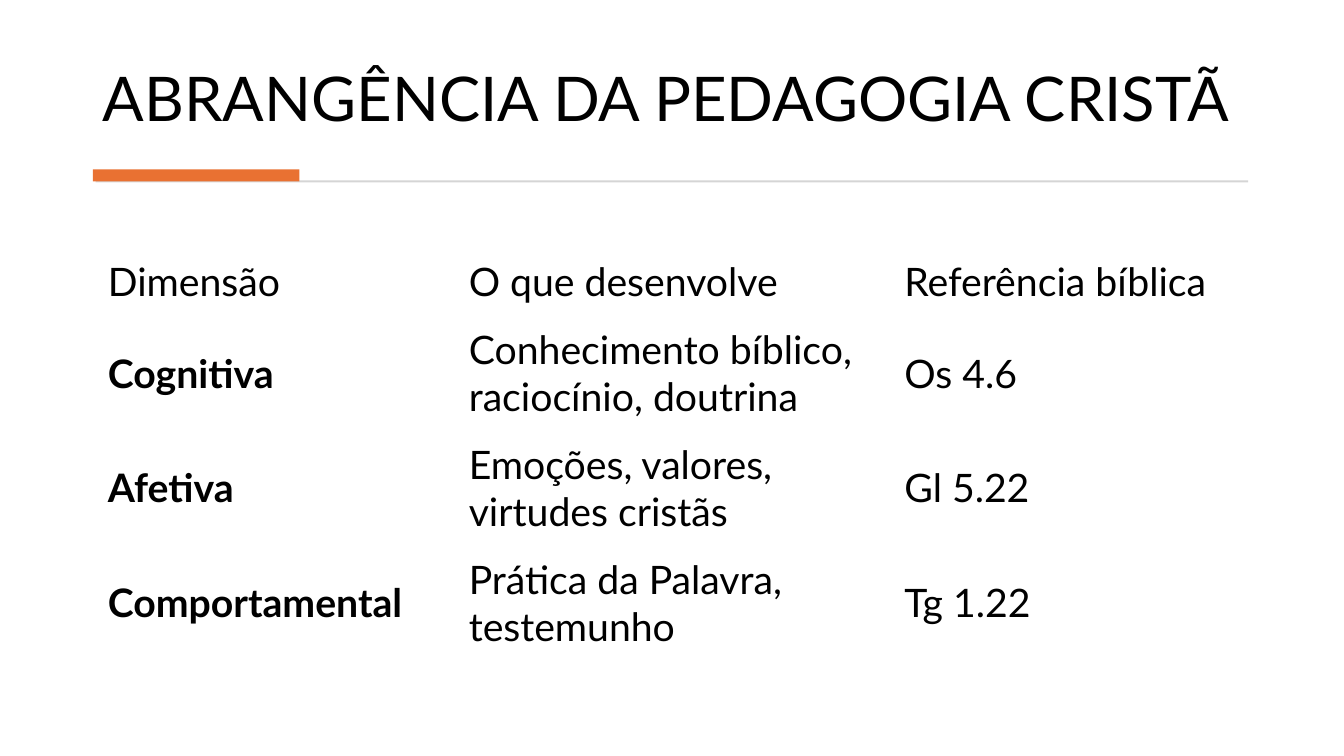
"""Build the slide on the scope of Christian pedagogy."""
from dataclasses import dataclass

from pptx import Presentation
from pptx.dml.color import RGBColor
from pptx.enum.shapes import MSO_SHAPE
from pptx.enum.text import MSO_ANCHOR, MSO_AUTO_SIZE, PP_ALIGN
from pptx.slide import Slide
from pptx.table import Table
from pptx.util import Inches, Pt

RECT = MSO_SHAPE.RECTANGLE
MIDDLE, BOTTOM = MSO_ANCHOR.MIDDLE, MSO_ANCHOR.BOTTOM
LEFT = PP_ALIGN.LEFT
FIXED = MSO_AUTO_SIZE.NONE

BLACK = RGBColor(0x00, 0x00, 0x00)
GREY = RGBColor(0xD5, 0xD5, 0xD5)
ORANGE = RGBColor(0xE9, 0x71, 0x32)
FACE = "Lato"


@dataclass(frozen=True)
class Bar:
    left: float
    top: float
    width: float
    height: float
    color: RGBColor


@dataclass(frozen=True)
class Aspect:
    name: str
    growth: str
    verse: str


BARS = (
    Bar(0.95, 1.79, 11.43, 0.02, GREY),
    Bar(0.92, 1.68, 2.05, 0.12, ORANGE),
)
HEADER = Aspect("Dimensão", "O que desenvolve", "Referência bíblica")
ASPECTS = (
    Aspect("Cognitiva", "Conhecimento bíblico, raciocínio, doutrina", "Os 4.6"),
    Aspect("Afetiva", "Emoções, valores, virtudes cristãs", "Gl 5.22"),
    Aspect("Comportamental", "Prática da Palavra, testemunho", "Tg 1.22"),
)
WIDTHS = (3.58, 4.32, 3.6)
HEAD_HEIGHT, ROW_HEIGHT = 0.68, 1.14


def add_title(slide: Slide, text: str) -> None:
    title = slide.shapes.title
    title.left, title.top = Inches(0.92), Inches(0.28)
    title.width, title.height = Inches(11.49), Inches(1.11)
    frame = title.text_frame
    frame.text = text
    frame.word_wrap = True
    frame.auto_size = FIXED
    frame.vertical_anchor = BOTTOM
    line = frame.paragraphs[0]
    line.alignment = LEFT
    line.line_spacing = 0.9
    line.font.name, line.font.size = FACE, Pt(44)
    line.font.color.rgb = BLACK


def add_bar(slide: Slide, bar: Bar) -> None:
    shape = slide.shapes.add_shape(
        RECT, Inches(bar.left), Inches(bar.top),
        Inches(bar.width), Inches(bar.height),
    )
    shape.shadow.inherit = False
    shape.fill.solid()
    shape.fill.fore_color.rgb = bar.color
    shape.line.fill.background()


def fill_row(table: Table, row: int, aspect: Aspect) -> None:
    texts = (aspect.name, aspect.growth, aspect.verse)
    for col, text in enumerate(texts):
        cell = table.cell(row, col)
        cell.text = text
        cell.fill.background()
        cell.vertical_anchor = MIDDLE
        cell.margin_left = cell.margin_right = Inches(0.15)
        cell.margin_top = cell.margin_bottom = Inches(0.08)
        font = cell.text_frame.paragraphs[0].font
        font.name, font.size = FACE, Pt(28)
        font.bold = row > 0 and col == 0
        font.color.rgb = BLACK


def add_grid(slide: Slide) -> None:
    rows = (HEADER, *ASPECTS)
    height = HEAD_HEIGHT + ROW_HEIGHT * len(ASPECTS)
    table = slide.shapes.add_table(
        len(rows), len(WIDTHS), Inches(0.92), Inches(2.45),
        Inches(sum(WIDTHS)), Inches(height),
    ).table
    table.first_row = table.horz_banding = False
    for col, width in zip(table.columns, WIDTHS):
        col.width = Inches(width)
    for row, aspect in enumerate(rows):
        table.rows[row].height = Inches(ROW_HEIGHT if row else HEAD_HEIGHT)
        fill_row(table, row, aspect)
    style = table._tbl.tblPr.find(
        "{http://schemas.openxmlformats.org/drawingml/2006/main}tableStyleId"
    )
    style.text = "{2D5ABB26-0587-4C30-8999-92F81FD0307C}"


def main() -> None:
    deck = Presentation()
    deck.slide_width, deck.slide_height = Inches(13.33), Inches(7.5)
    slide = deck.slides.add_slide(deck.slide_layouts[5])
    add_title(slide, "ABRANGÊNCIA DA PEDAGOGIA CRISTÃ")
    for bar in BARS:
        add_bar(slide, bar)
    add_grid(slide)
    deck.save("out.pptx")


if __name__ == "__main__":
    main()
